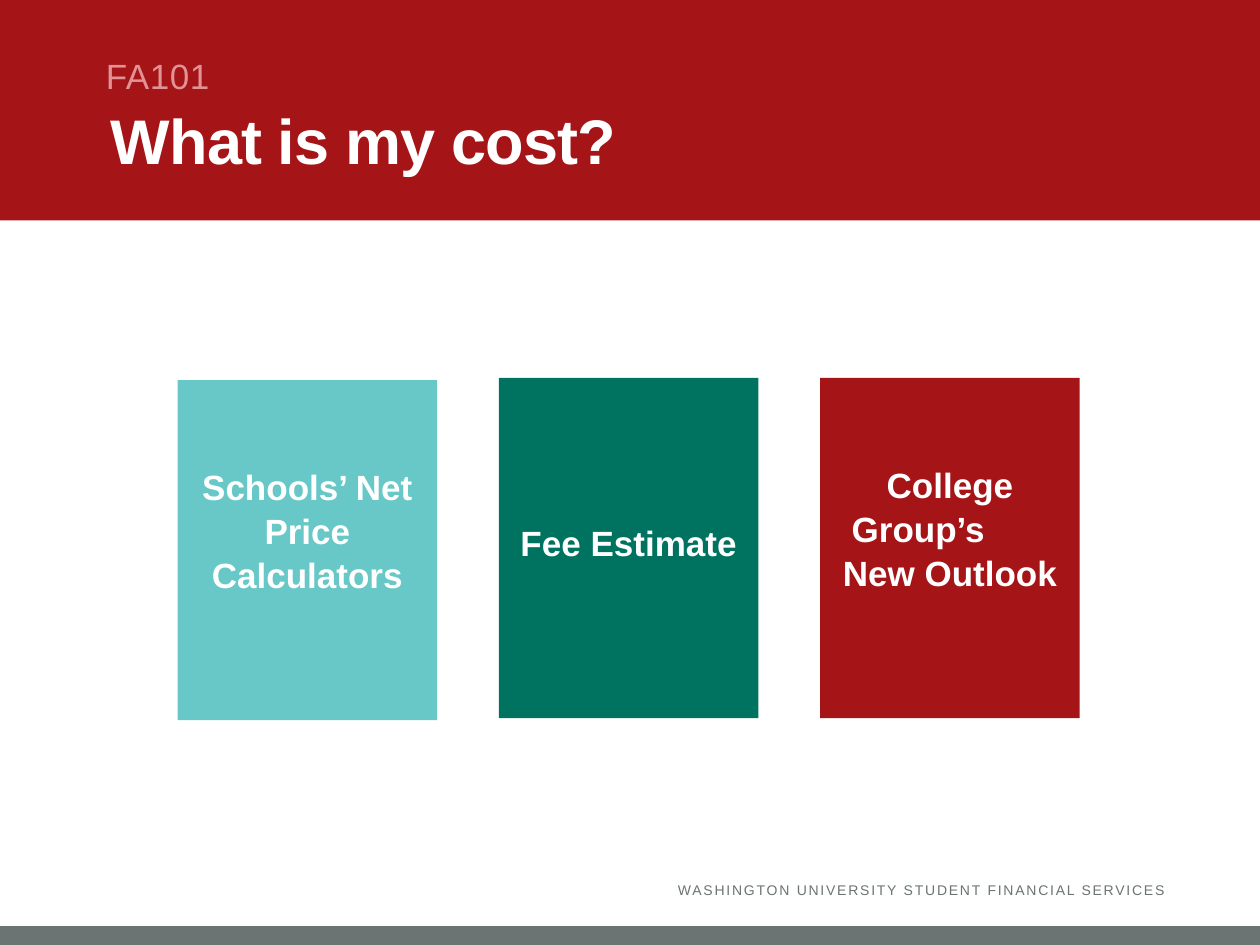
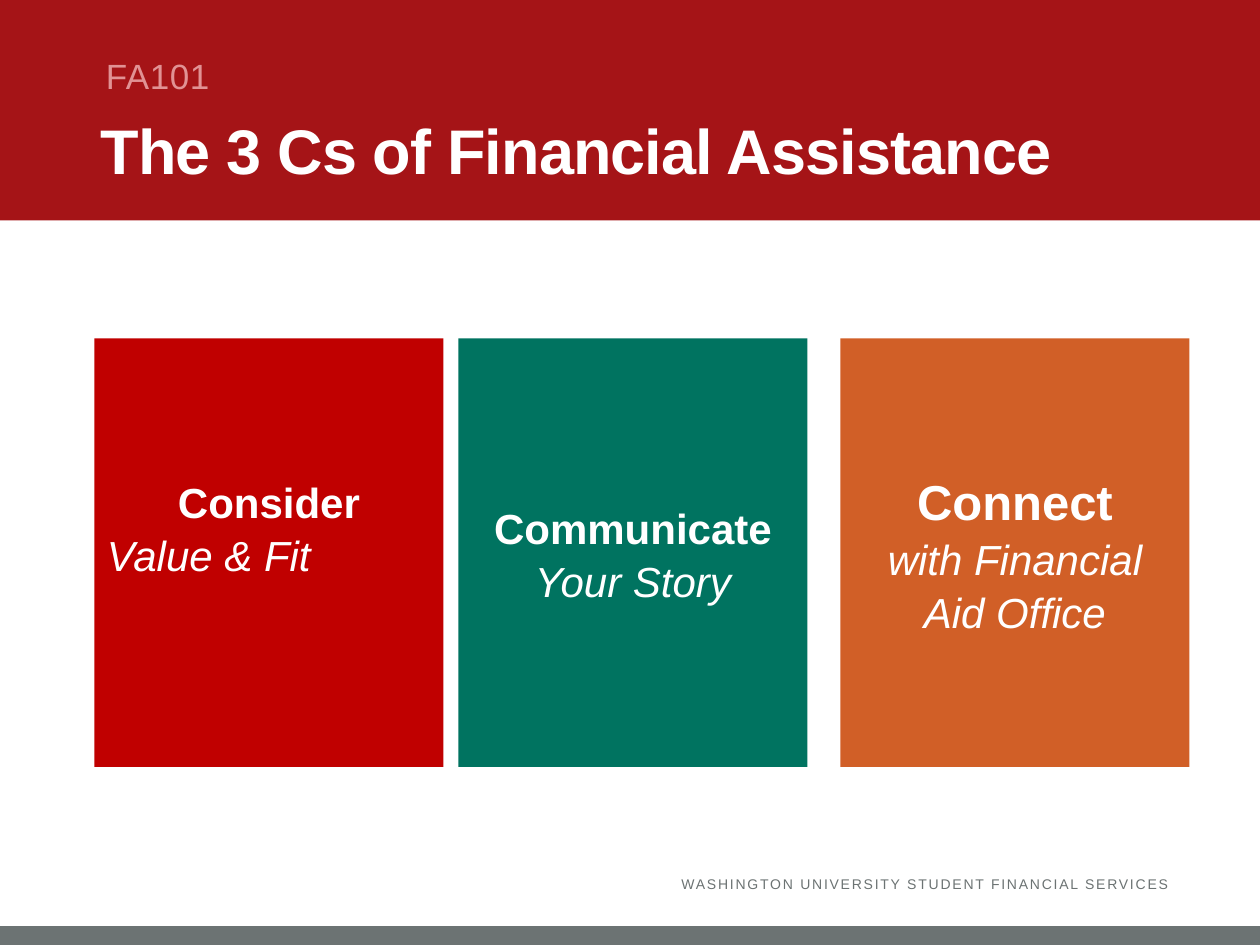
from lxml import etree
from pptx import Presentation
from pptx.dml.color import RGBColor
from pptx.enum.shapes import MSO_SHAPE
from pptx.enum.text import MSO_ANCHOR, MSO_AUTO_SIZE, PP_ALIGN
from pptx.oxml.ns import qn
from pptx.util import Pt

RECT = MSO_SHAPE.RECTANGLE
TOP, MIDDLE = MSO_ANCHOR.TOP, MSO_ANCHOR.MIDDLE
LEFT, CENTER, RIGHT = PP_ALIGN.LEFT, PP_ALIGN.CENTER, PP_ALIGN.RIGHT
FIXED = MSO_AUTO_SIZE.NONE

HUES = {
    "red": "A51417",
    "gray": "6C7373",
    "pink": "E19294",
    "white": "FFFFFF",
    "teal": "67C8C7",
    "green": "007360",
    "scarlet": "C00000",
    "orange": "D15F27",
}
FONT = "Arial"
FOOTER = "WASHINGTON UNIVERSITY STUDENT FINANCIAL SERVICES"
SIDES = ("margin_left", "margin_top", "margin_right", "margin_bottom")
HEAD = {"size": Pt(36), "bold": True}
TAG = {"size": Pt(20), "bold": False}
FOOT = {"size": Pt(8)}
LABEL = {"size": Pt(20), "bold": True}
WORD = {"size": Pt(24), "bold": True}
BIG = {"size": Pt(28), "bold": True}
NOTE = {"size": Pt(24), "italic": True}


def apply(item, values):
    for name, value in values.items():
        setattr(item, name, value)


def color(name):
    return RGBColor.from_string(HUES[name])


def place(shape, box):
    apply(shape, dict(zip(("left", "top", "width", "height"), map(Pt, box))))


def set_frame(shape, insets, anchor):
    frame = shape.text_frame
    apply(frame, {"word_wrap": True, "auto_size": FIXED, "vertical_anchor": anchor})
    apply(frame, dict(zip(SIDES, map(Pt, insets))))
    return frame


def write(para, text, font, hue, align=LEFT, line=1.0, track=0):
    apply(para, {"alignment": align, "line_spacing": line,
                 "space_before": Pt(0), "space_after": Pt(0)})
    run = para.add_run()
    run.text = text
    apply(run.font, {"name": FONT, **font})
    run.font.color.rgb = color(hue)
    if track:
        run.font._element.set("spc", str(track))


def add_rect(slide, box, hue):
    shape = slide.shapes.add_shape(RECT, *map(Pt, box))
    shape.shadow.inherit = False
    shape.fill.solid()
    shape.fill.fore_color.rgb = color(hue)
    shape.line.fill.background()
    return shape


def add_bands(slide):
    tree = slide.slide_layout.shapes.element
    bands = (((0, 0, 720, 126), "red"), ((0, 529.2, 720, 10.8), "gray"))
    for i, (box, hue) in enumerate(bands):
        band = add_rect(slide, box, hue).element
        band.nvSpPr.cNvPr.set("id", str(90 + i))
        tree.insert(2 + i, band)


def add_title(slide, text, left, top):
    title = slide.shapes.title
    place(title, (left, top, 590, 67))
    frame = set_frame(title, (3.6, 3.6, 7.2, 3.6), TOP)
    write(frame.paragraphs[0], text, HEAD, "white", line=0.8, track=-50)


def add_tag(slide):
    body = slide.placeholders[1]
    place(body, (54, 30.2, 612, 26.6))
    para = set_frame(body, (6.5, 3.6, 7.2, 3.6), TOP).paragraphs[0]
    props = para._p.get_or_add_pPr()
    apply_xml = {"marL": "0", "indent": "0"}
    for name, value in apply_xml.items():
        props.set(name, value)
    etree.SubElement(props, qn("a:buNone"))
    write(para, "FA101", TAG, "pink", line=0.9, track=30)


def add_footer(slide, left, top):
    box = slide.shapes.add_textbox(Pt(left), Pt(top), Pt(306), Pt(28.8))
    frame = set_frame(box, (0, 0, 0, 0), MIDDLE)
    write(frame.paragraphs[0], FOOTER, FOOT, "gray", RIGHT, track=100)


def add_card(slide, box, hue, lines, insets, anchor):
    frame = set_frame(add_rect(slide, box, hue), insets, anchor)
    for i, (text, font, align, indent) in enumerate(lines):
        para = frame.add_paragraph() if i else frame.paragraphs[0]
        if indent:
            para._p.get_or_add_pPr().set("marL", str(Pt(indent)))
        write(para, text, font, "white", align, 1.05)


def add_page(deck, title, spot, foot):
    slide = deck.slides.add_slide(deck.slide_layouts[1])
    add_title(slide, title, *spot)
    add_tag(slide)
    add_footer(slide, *foot)
    return slide


def add_costs(deck):
    slide = add_page(deck, "What is my cost?", (59.8, 62.6), (360, 494))
    add_bands(slide)
    cards = (
        ("teal", 217.2, 47.5, [("Schools’ Net Price Calculators", LABEL, CENTER, 0)]),
        ("green", 216, 80.6, [("Fee Estimate", LABEL, CENTER, 0)]),
        ("red", 216, 47.5, [("College", LABEL, CENTER, 0),
                            ("Group’s", LABEL, LEFT, 18),
                            ("New Outlook", LABEL, CENTER, 0)]),
    )
    for i, (hue, top, pad, lines) in enumerate(cards):
        box = (101.5 + 183.6 * i, top, 148.3, 194.4)
        add_card(slide, box, hue, lines, (0, pad, 0, 3.6), TOP)


def add_steps(deck):
    slide = add_page(deck, "The 3 Cs of Financial Assistance", (54, 68.4), (362, 491))
    cards = (
        ("scarlet", 54, 32.6, [("Consider", WORD, CENTER, 0),
                               ("Value & Fit", NOTE, LEFT, 0)]),
        ("green", 262, 3.6, [("Communicate", WORD, CENTER, 0),
                             ("Your Story", NOTE, CENTER, 0)]),
        ("orange", 480.3, 3.6, [("Connect", BIG, CENTER, 0),
                                ("with Financial Aid Office", NOTE, CENTER, 0)]),
    )
    for hue, left, pad, lines in cards:
        box = (left, 193.4, 199.4, 244.8)
        add_card(slide, box, hue, lines, (7.2, 3.6, 7.2, pad), MIDDLE)


def main():
    deck = Presentation()
    apply(deck, {"slide_width": Pt(720), "slide_height": Pt(540)})
    add_costs(deck)
    add_steps(deck)
    deck.save("out.pptx")


if __name__ == "__main__":
    main()
